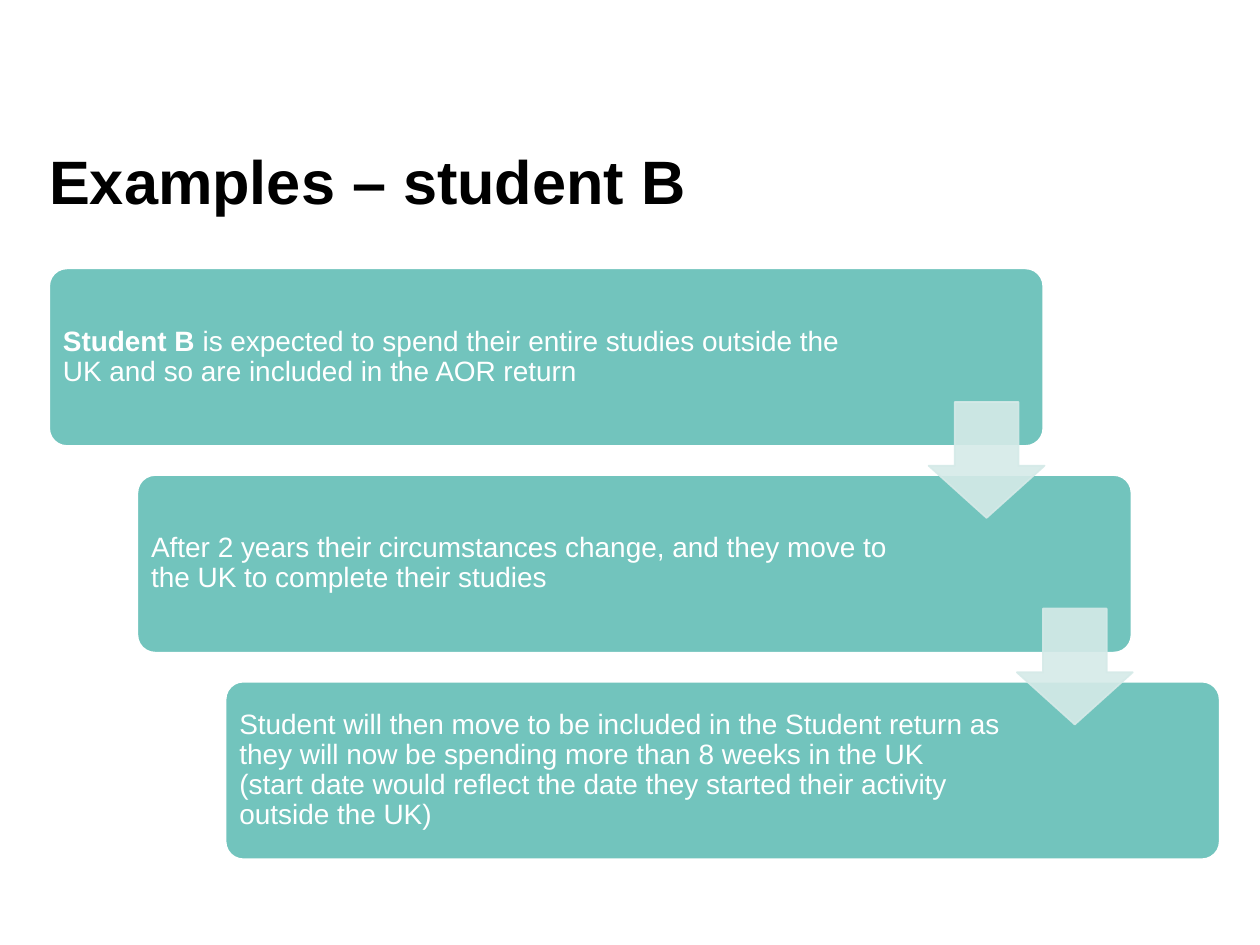
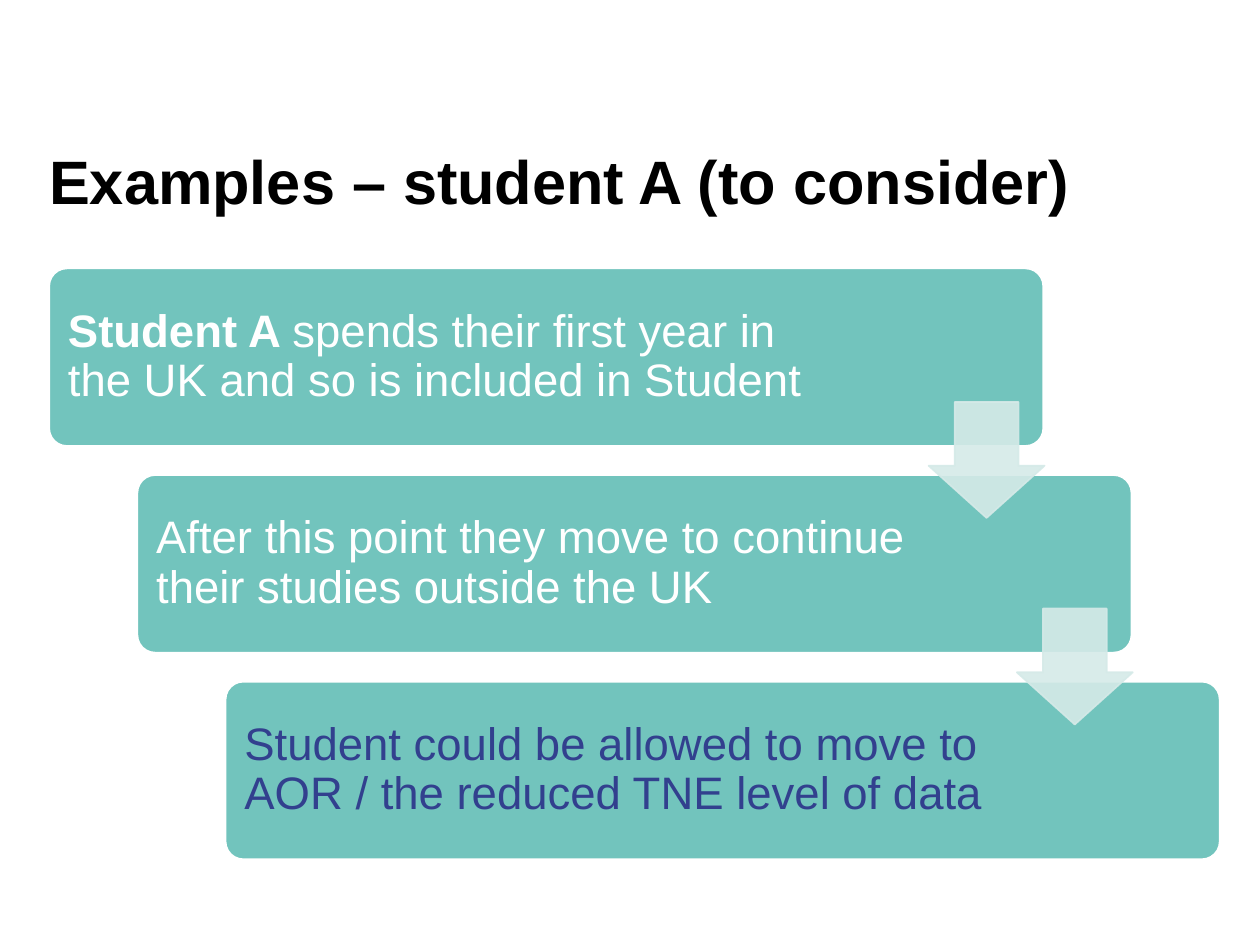
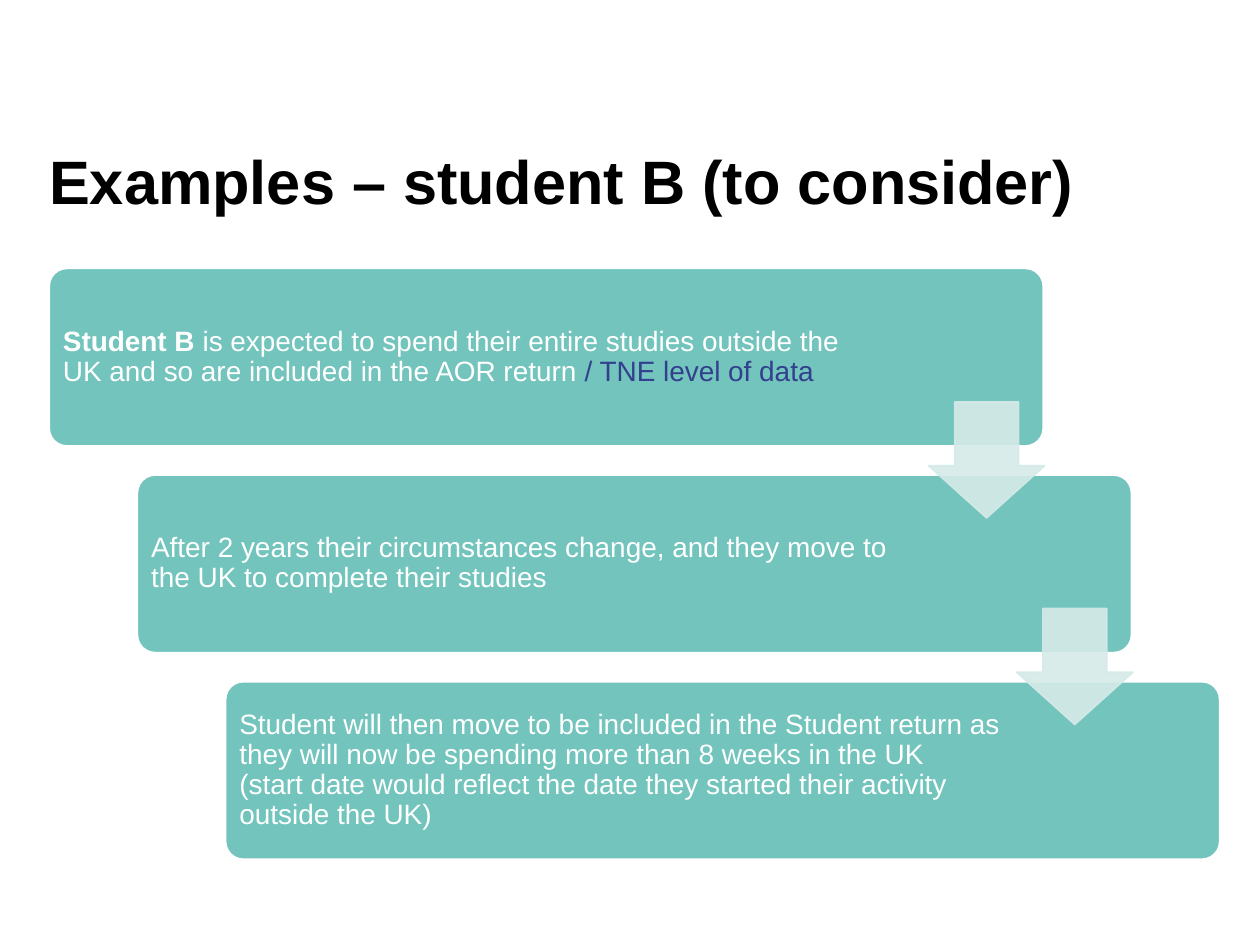
from lxml import etree
from pptx import Presentation
from pptx.dml.color import RGBColor
from pptx.enum.shapes import MSO_SHAPE
from pptx.enum.text import MSO_ANCHOR, MSO_AUTO_SIZE, PP_ALIGN
from pptx.oxml.ns import qn
from pptx.util import Inches, Pt

ROUND, ARROW = MSO_SHAPE.ROUNDED_RECTANGLE, MSO_SHAPE.DOWN_ARROW
TOP, MIDDLE = MSO_ANCHOR.TOP, MSO_ANCHOR.MIDDLE
LEFT, FIXED = PP_ALIGN.LEFT, MSO_AUTO_SIZE.NONE

FONT = "Arial"
BLACK, WHITE, TEAL, PALE, BLUE = "000000", "FFFFFF", "72C4BD", "D5EAE8", "32408E"

# Staircase of steps, in inches
EDGE, FIRST = 0.39, 2.13
STEP_W, STEP_H = 7.89, 1.41
COL, ROW = 0.70, 1.64
PAD = 0.04
ARROW_X, ARROW_Y, ARROW_SIZE = 7.37, 3.19, 0.92


def rgb(code):
    return RGBColor.from_string(code)


def draw(slide, kind, box, tint, edge, adjust, alpha=None):
    """Add a flat preset shape; alpha is its opacity in percent."""
    shape = slide.shapes.add_shape(kind, *map(Inches, box))
    shape.shadow.inherit = False
    shape.fill.solid()
    shape.fill.fore_color.rgb = rgb(tint)
    shape.line.color.rgb = rgb(edge)
    shape.line.width = Pt(1)
    for n, value in enumerate(adjust):
        shape.adjustments[n] = value
    if alpha:
        for paint in shape._element.spPr.iter(qn("a:srgbClr")):
            etree.SubElement(paint, qn("a:alpha")).set("val", str(alpha * 1000))


# A run is (text, colour, bold)
LATER = [("After 2 years their circumstances change, and they move to the UK "
          "to complete their studies", WHITE, False)]
RETURN = [("Student will then move to be included in the Student return as they "
           "will now be spending more than 8 weeks in the UK \n"
           "(start date would reflect the date they started their activity "
           "outside the UK)", WHITE, False)]
START = [("Student B ", WHITE, True),
         ("is expected to spend their entire studies outside the UK and so are "
          "included in the AOR return", WHITE, False)]

# Title, text size, inset, steps
SLIDES = [
    ("Examples – student B", 16, 0.07, [START, LATER, RETURN]),
    ("Examples – student A (to consider)", 26, 0.11, [
        [("Student A ", WHITE, True),
         ("spends their first year in the UK and so is included in Student",
          WHITE, False)],
        [("After this point they move to continue their studies outside the UK",
          WHITE, False)],
        [("Student could be allowed to move to AOR / the reduced TNE level of data",
          BLUE, False)],
    ]),
    ("Examples – student B (to consider)", 16, 0.07, [
        START + [(" ", WHITE, False), ("/ TNE level of data", BLUE, False)],
        LATER, RETURN]),
]

deck = Presentation()
deck.slide_width, deck.slide_height = Inches(10), Inches(7.5)

for heading, size, inset, steps in SLIDES:
    slide = deck.slides.add_slide(deck.slide_layouts[5])

    title = slide.shapes.title
    title.left, title.top = Inches(EDGE), Inches(1.08)
    title.width, title.height = Inches(9.29), Inches(0.95)
    frame = title.text_frame
    frame.auto_size, frame.word_wrap = FIXED, True
    frame.vertical_anchor = TOP
    frame.margin_left = frame.margin_right = 0
    frame.margin_top = frame.margin_bottom = 0
    para = frame.paragraphs[0]
    para.alignment, para.line_spacing = LEFT, Pt(46)
    run = para.add_run()
    run.text = heading
    run.font.name, run.font.size, run.font.bold = FONT, Pt(35), True
    run.font.color.rgb = rgb(BLACK)

    for i, runs in enumerate(steps):
        x, y = EDGE + i * COL, FIRST + i * ROW
        draw(slide, ROUND, (x, y, STEP_W, STEP_H), TEAL, WHITE, [0.1])

        wide = 6.2 if i else 6.37
        area = (x + PAD, y + PAD, wide, STEP_H - 2 * PAD)
        frame = slide.shapes.add_textbox(*map(Inches, area)).text_frame
        frame.word_wrap, frame.vertical_anchor = True, MIDDLE
        frame.margin_left = frame.margin_right = Inches(inset)
        frame.margin_top = frame.margin_bottom = Inches(inset)
        para = frame.paragraphs[0]
        para.alignment, para.line_spacing = LEFT, 0.9
        for text, tint, bold in runs:
            for n, line in enumerate(text.split("\n")):
                if n:
                    para.add_line_break()
                run = para.add_run()
                run.text = line
                run.font.name, run.font.size, run.font.bold = FONT, Pt(size), bold
                run.font.color.rgb = rgb(tint)

    for i in range(len(steps) - 1):
        box = (ARROW_X + i * COL, ARROW_Y + i * ROW, ARROW_SIZE, ARROW_SIZE)
        # Head length first, then shaft width
        draw(slide, ARROW, box, PALE, PALE, [0.55, 0.45], alpha=90)

deck.save("out.pptx")
